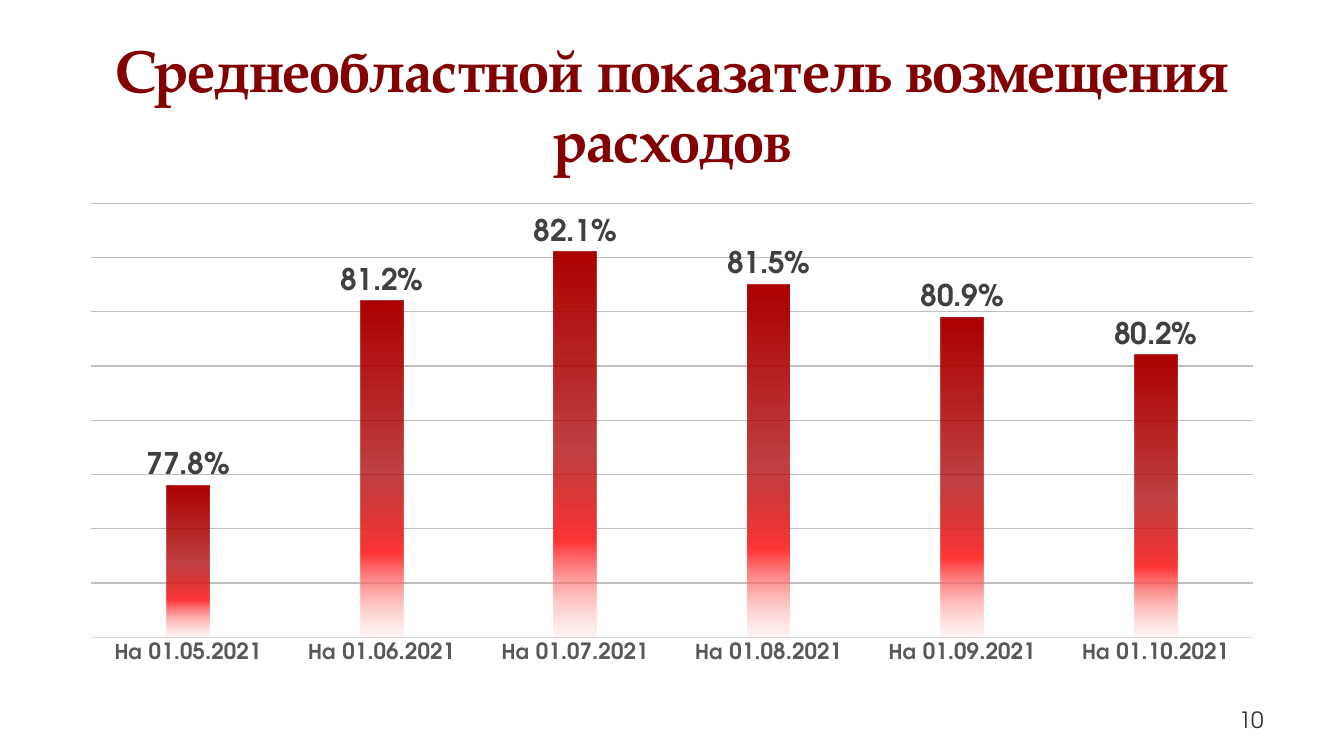
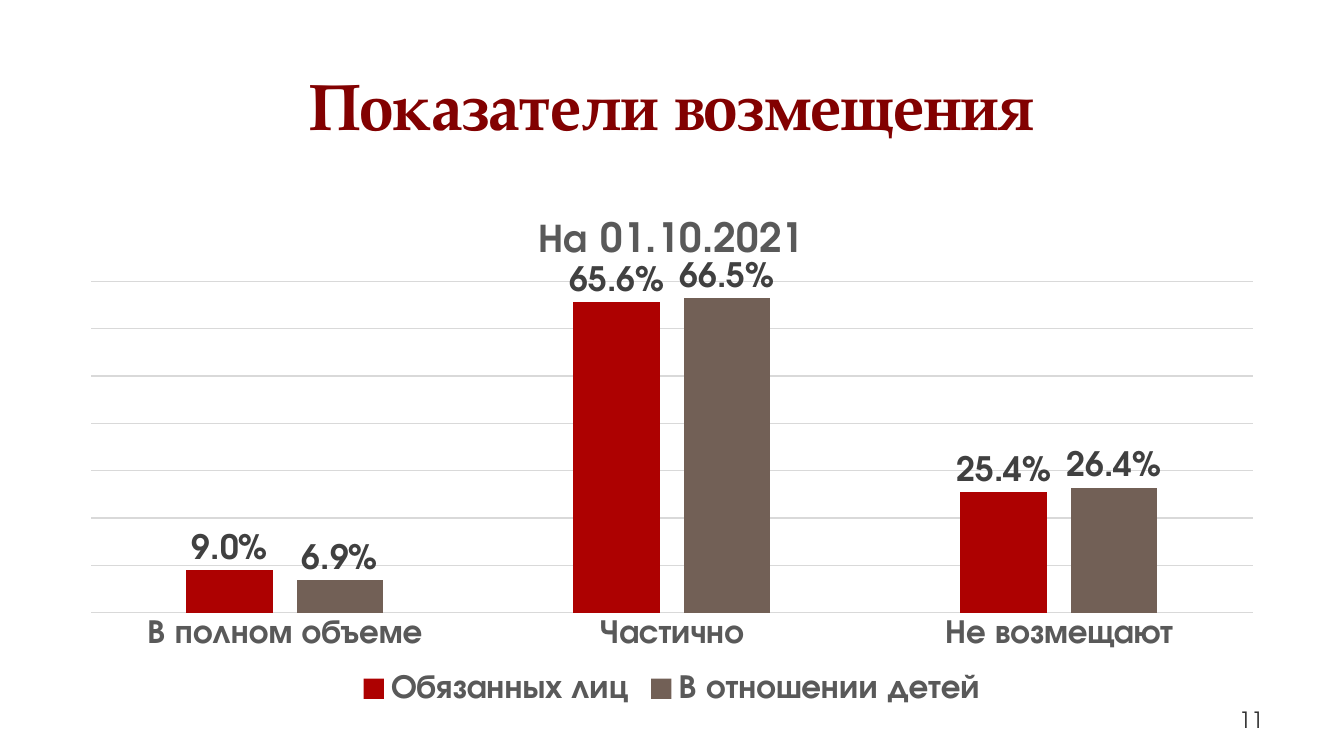
from dataclasses import dataclass

from lxml import etree
from pptx import Presentation
from pptx.chart.data import CategoryChartData
from pptx.dml.color import RGBColor
from pptx.enum.chart import (XL_CHART_TYPE, XL_LABEL_POSITION,
                             XL_LEGEND_POSITION, XL_TICK_MARK)
from pptx.enum.shapes import MSO_SHAPE
from pptx.enum.text import MSO_ANCHOR, PP_ALIGN
from pptx.oxml.ns import qn
from pptx.util import Cm, Pt

CLUSTERED = XL_CHART_TYPE.COLUMN_CLUSTERED
OUTSIDE_END = XL_LABEL_POSITION.OUTSIDE_END
LEGEND_BOTTOM = XL_LEGEND_POSITION.BOTTOM
NO_TICK = XL_TICK_MARK.NONE
RECTANGLE = MSO_SHAPE.RECTANGLE
ROUNDED_RECTANGLE = MSO_SHAPE.ROUNDED_RECTANGLE
MIDDLE = MSO_ANCHOR.MIDDLE
CENTER, RIGHT = PP_ALIGN.CENTER, PP_ALIGN.RIGHT


@dataclass(frozen=True)
class Theme:
    title_font: str = "TeX Gyre Pagella"
    body_font: str = "TeX Gyre Adventor"
    white: str = "FFFFFF"
    title: str = "820101"
    red: str = "AD0101"
    brown: str = "726056"
    axis_text: str = "595959"
    label_text: str = "404040"
    number_text: str = "303030"
    axis_line: str = "D9D9D9"
    dark_grid: str = "BFBFBF"
    hairline: float = 0.75
    number_size: float = 12
    chart_title_size: float = 21.6
    percent: str = "0.0%"
    # position in %, colour, opacity in %
    red_fade: tuple = ((0, "AD0101", 100), (51, "AD0101", 75),
                       (75, "FE3737", 100), (100, "FFBCBC", 15))


THEME = Theme()


@dataclass(frozen=True)
class Box:
    """A rectangle in centimetres."""
    left: float
    top: float
    width: float
    height: float

    def inset(self, across, down):
        return Box(self.left + across, self.top + down,
                   self.width - 2 * across, self.height - 2 * down)

    def lengths(self):
        return Cm(self.left), Cm(self.top), Cm(self.width), Cm(self.height)


PAGE = Box(0, 0, 25.4, 14.29)
TITLE_BAND = Box(0.76, 0.58, 23.88, 2.77)
NUMBER_BOX = Box(18.21, 13.23, 5.92, 0.76)


def style_font(font, size, color, bold=True, name=THEME.body_font):
    font.size = Pt(size)
    font.bold = bold
    font.name = name
    font.color.rgb = RGBColor.from_string(color)


def set_opacity(color_element, percent):
    alpha = etree.SubElement(color_element, qn("a:alpha"))
    alpha.set("val", str(percent * 1000))


def add_panel(slide, box, kind=RECTANGLE, opacity=100):
    shape = slide.shapes.add_shape(kind, *box.lengths())
    shape.shadow.inherit = False
    shape.fill.solid()
    shape.fill.fore_color.rgb = RGBColor.from_string(THEME.white)
    shape.line.fill.background()
    if opacity < 100:
        set_opacity(next(shape.element.spPr.iter(qn("a:srgbClr"))), opacity)
    return shape


def add_text(slide, box, text, alignment, **font_style):
    text_frame = slide.shapes.add_textbox(*box.lengths()).text_frame
    text_frame.word_wrap = True
    text_frame.vertical_anchor = MIDDLE
    text_frame.text = text
    paragraph = text_frame.paragraphs[0]
    paragraph.alignment = alignment
    style_font(paragraph.runs[0].font, **font_style)


def add_title_band(slide, box, title, size):
    add_panel(slide, box, opacity=83)
    add_panel(slide, box.inset(0.28, 0.21))
    add_text(slide, box.inset(0.43, 0.28), title, CENTER, size=size,
             color=THEME.title, name=THEME.title_font)


def add_base_slide(presentation, title, title_size, number):
    slide = presentation.slides.add_slide(presentation.slide_layouts[6])
    page_panel = add_panel(slide, PAGE.inset(0.25, 0.2), ROUNDED_RECTANGLE)
    page_panel.adjustments[0] = 0.017
    add_title_band(slide, TITLE_BAND, title, title_size)
    add_text(slide, NUMBER_BOX, str(number), RIGHT, size=THEME.number_size,
             color=THEME.number_text, bold=False)
    return slide


def fill_with_fade(series, stops):
    fill = series.format.fill
    fill.gradient()
    fill.gradient_angle = 270
    stop_list = next(series._element.iter(qn("a:gsLst")))
    for stop in list(stop_list):
        stop_list.remove(stop)
    for position, color, opacity in stops:
        stop = etree.SubElement(stop_list, qn("a:gs"), pos=str(position * 1000))
        color_element = etree.SubElement(stop, qn("a:srgbClr"), val=color)
        set_opacity(color_element, opacity)


def place_plot(chart, top, height, left=0.02, width=0.96):
    """Fix the inner plot area, in fractions of the chart."""
    plot_area = next(chart._chartSpace.iter(qn("c:plotArea")))
    for old_layout in plot_area.findall(qn("c:layout")):
        plot_area.remove(old_layout)
    layout = etree.Element(qn("c:layout"))
    manual = etree.SubElement(layout, qn("c:manualLayout"))
    settings = {"layoutTarget": "inner", "xMode": "edge", "yMode": "edge",
                "x": left, "y": top, "w": width, "h": height}
    for name, value in settings.items():
        etree.SubElement(manual, qn(f"c:{name}"), val=str(value))
    plot_area.insert(0, layout)


def style_axes(chart, text_size, scale, grid_color):
    category_axis, value_axis = chart.category_axis, chart.value_axis
    category_axis.major_tick_mark = category_axis.minor_tick_mark = NO_TICK
    style_font(category_axis.tick_labels.font, text_size, THEME.axis_text)
    value_axis.visible = False
    value_axis.minimum_scale, value_axis.maximum_scale, value_axis.major_unit = scale
    value_axis.has_major_gridlines = True
    value_axis.tick_labels.number_format = THEME.percent
    value_axis.tick_labels.number_format_is_linked = False
    for line, color in ((category_axis.format.line, THEME.axis_line),
                        (value_axis.major_gridlines.format.line, grid_color)):
        line.color.rgb = RGBColor.from_string(color)
        line.width = Pt(THEME.hairline)


def add_column_chart(slide, box, categories, series_values, gap, overlap,
                     axis_size, label_size, scale, grid_color):
    data = CategoryChartData(number_format=THEME.percent)
    data.categories = categories
    for name, values in series_values.items():
        data.add_series(name, values)
    chart = slide.shapes.add_chart(CLUSTERED, *box.lengths(), data).chart
    style_font(chart.font, axis_size, THEME.axis_text)
    chart.has_title = chart.has_legend = False
    style_axes(chart, axis_size, scale, grid_color)

    plot = chart.plots[0]
    plot.gap_width, plot.overlap = gap, overlap
    plot.vary_by_categories = False
    for series in plot.series:
        series.invert_if_negative = False
        labels = series.data_labels
        labels.show_value = True
        labels.position = OUTSIDE_END
        labels.number_format = THEME.percent
        labels.number_format_is_linked = False
        style_font(labels.font, label_size, THEME.label_text)
    return chart


def add_average_chart(slide, box):
    chart = add_column_chart(
        slide, box,
        categories=[f"На 01.{month:02}.2021" for month in range(5, 11)],
        series_values={"Series 1": (0.778, 0.812, 0.821, 0.815, 0.809, 0.802)},
        gap=355, overlap=-70, axis_size=12, label_size=16,
        scale=(0.75, 0.83, 0.01), grid_color=THEME.dark_grid)
    fill_with_fade(chart.plots[0].series[0], THEME.red_fade)
    place_plot(chart, top=0.02, height=0.9)


def add_share_chart(slide, box):
    chart = add_column_chart(
        slide, box,
        categories=["В полном объеме", "Частично", "Не возмещают"],
        series_values={"Обязанных лиц": (0.09, 0.656, 0.254),
                       "В отношении детей": (0.069, 0.665, 0.264)},
        gap=219, overlap=-27, axis_size=18, label_size=18,
        scale=(0, 0.7, 0.1), grid_color=THEME.axis_line)
    for series, color in zip(chart.plots[0].series, (THEME.red, THEME.brown)):
        series.format.fill.solid()
        series.format.fill.fore_color.rgb = RGBColor.from_string(color)

    chart.has_title = True
    title_frame = chart.chart_title.text_frame
    title_frame.text = "На 01.10.2021"
    style_font(title_frame.paragraphs[0].runs[0].font,
               THEME.chart_title_size, THEME.axis_text)
    chart.has_legend = True
    chart.legend.position = LEGEND_BOTTOM
    chart.legend.include_in_layout = False
    style_font(chart.legend.font, 18, THEME.axis_text)
    place_plot(chart, top=0.17, height=0.64)


def main():
    presentation = Presentation()
    presentation.slide_width = Cm(PAGE.width)
    presentation.slide_height = Cm(PAGE.height)

    average_slide = add_base_slide(
        presentation, "Среднеобластной показатель возмещения расходов", 31.5, 10)
    add_average_chart(average_slide, Box(1.27, 3.66, 22.86, 9.12))

    share_slide = add_base_slide(presentation, "Показатели возмещения", 35, 11)
    add_share_chart(share_slide, Box(1.27, 3.66, 22.86, 9.78))

    presentation.save("out.pptx")


if __name__ == "__main__":
    main()
